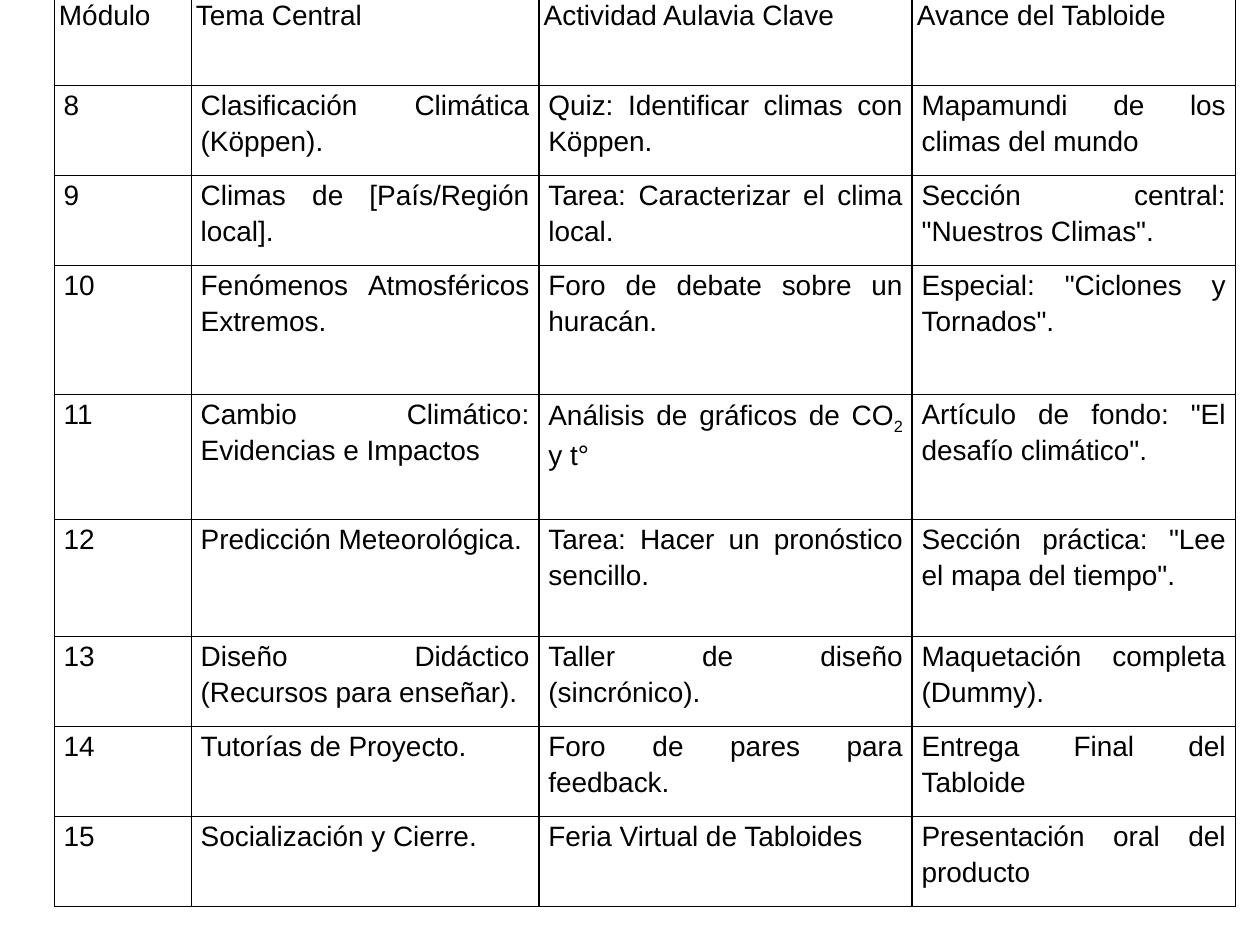
from typing import NamedTuple

from lxml.etree import SubElement
from pptx import Presentation
from pptx.dml.color import RGBColor
from pptx.enum.text import PP_ALIGN as Align
from pptx.oxml.ns import qn
from pptx.util import Pt

COLORS = {"text": "000000", "border": "000000"}
FONT = "Arial"
SUBSCRIPT = "₂"
COLUMN_WIDTHS = [78.3, 198.7, 213.3, 184.6]
ROW_HEIGHT = 51.4
HEADER_INSET, BODY_INSET = 2.7, 5.4


class Module(NamedTuple):
    number: str
    topic: str
    activity: str
    progress: str
    height: float = ROW_HEIGHT


HEADER = Module("Módulo", "Tema Central", "Actividad Aulavia Clave", "Avance del Tabloide")
MODULES = [
    Module("8", "Clasificación Climática (Köppen).",
           "Quiz: Identificar climas con Köppen.", "Mapamundi de los climas del mundo"),
    Module("9", "Climas de [País/Región local].",
           "Tarea: Caracterizar el clima local.", 'Sección central: "Nuestros Climas".'),
    Module("10", "Fenómenos Atmosféricos Extremos.",
           "Foro de debate sobre un huracán.", 'Especial: "Ciclones y Tornados".', 73.7),
    Module("11", "Cambio Climático: Evidencias e Impactos",
           "Análisis de gráficos de CO₂ y t°",
           'Artículo de fondo: "El desafío climático".', 71.4),
    Module("12", "Predicción Meteorológica.",
           "Tarea: Hacer un pronóstico sencillo.",
           'Sección práctica: "Lee el mapa del tiempo".', 66.9),
    Module("13", "Diseño Didáctico (Recursos para enseñar).",
           "Taller de diseño (sincrónico).", "Maquetación completa (Dummy)."),
    Module("14", "Tutorías de Proyecto.",
           "Foro de pares para feedback.", "Entrega Final del Tabloide"),
    Module("15", "Socialización y Cierre.",
           "Feria Virtual de Tabloides", "Presentación oral del producto"),
]


def add_run(paragraph, text: str, *, size: float = 16, subscript: bool = False) -> None:
    run = paragraph.add_run()
    run.text = text
    run.font.name = FONT
    run.font.size = Pt(size)
    run.font.color.rgb = RGBColor.from_string(COLORS["text"])
    if subscript:
        run.font._element.set("baseline", "-25000")


def add_borders(cell, *, width: float = 1) -> None:
    properties = cell._tc.get_or_add_tcPr()
    for side in ("a:lnL", "a:lnR", "a:lnT", "a:lnB"):
        line = SubElement(properties, qn(side), w=str(Pt(width)))
        fill = SubElement(line, qn("a:solidFill"))
        SubElement(fill, qn("a:srgbClr"), val=COLORS["border"])


def fill_cell(cell, text: str, *, inset: float) -> None:
    add_borders(cell)
    cell.fill.background()
    cell.margin_left = cell.margin_right = Pt(inset)
    cell.margin_top = cell.margin_bottom = Pt(0)
    paragraph = cell.text_frame.paragraphs[0]
    paragraph.alignment = Align.JUSTIFY
    paragraph.line_spacing = 1.15
    paragraph.space_after = Pt(10)
    before, mark, after = text.partition(SUBSCRIPT)
    add_run(paragraph, before)
    if mark:
        add_run(paragraph, "2", subscript=True)
        add_run(paragraph, after)


def add_module_table(slide, rows: list[Module]) -> None:
    frame = slide.shapes.add_table(
        len(rows), len(COLUMN_WIDTHS), Pt(31), Pt(-2.4),
        Pt(sum(COLUMN_WIDTHS)), Pt(sum(row.height for row in rows)))
    table = frame.table
    table.first_row = table.horz_banding = False
    for column, width in zip(table.columns, COLUMN_WIDTHS):
        column.width = Pt(width)
    for index, module in enumerate(rows):
        table.rows[index].height = Pt(module.height)
        inset = BODY_INSET if index else HEADER_INSET
        for cell, text in zip(table.rows[index].cells, module[:4]):
            fill_cell(cell, text, inset=inset)


def main() -> None:
    presentation = Presentation()
    presentation.slide_width, presentation.slide_height = Pt(720), Pt(540)
    slide = presentation.slides.add_slide(presentation.slide_layouts[6])
    # Course plan: one row per module
    add_module_table(slide, [HEADER, *MODULES])
    presentation.save("out.pptx")


if __name__ == "__main__":
    main()
